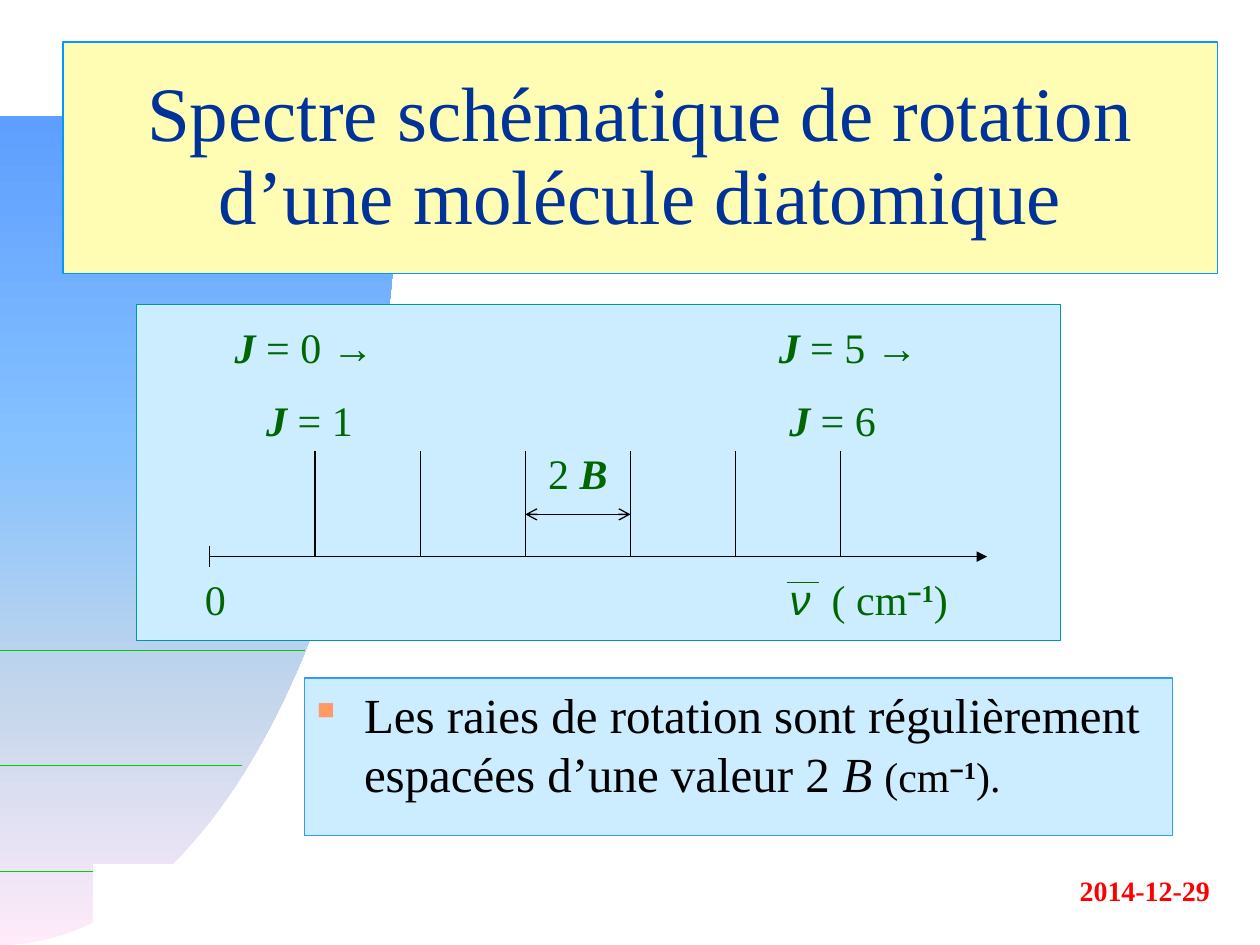
from lxml.etree import SubElement
from pptx import Presentation
from pptx.dml.color import RGBColor
from pptx.enum.shapes import MSO_CONNECTOR, MSO_SHAPE
from pptx.enum.text import MSO_ANCHOR, PP_ALIGN
from pptx.oxml.ns import qn
from pptx.util import Cm, Pt

BLACK, GREEN, LIME = "010000", "006600", "00CC00"
SERIF, SANS = "Times New Roman", "Arial"
LEFT, MID, RIGHT = PP_ALIGN.LEFT, PP_ALIGN.CENTER, PP_ALIGN.RIGHT
SLANT = {"italic": True}
HEAVY = {"bold": True, "italic": True}
UNIT = [("−", {"bold": True, "name": SANS}, {"baseline": "30000"}),
        ("1", {"bold": True}, {"baseline": "30000"})]

TITLE = [[("Spectre schématique de rotation d’une molécule diatomique",)]]
BODY = [[("Les raies de rotation sont régulièrement espacées d’une valeur 2 ",),
         ("B ", SLANT), ("(cm", {"size": Pt(24)}),
         *[(t, {**f, "size": Pt(24)}, x) for t, f, x in UNIT],
         (").", {"size": Pt(24)})]]
DATE = [[("2014-12-29", {"bold": True})]]
GAP = [[("2 ",), ("B", HEAVY)]]
ZERO = [[("0",)]]
WAVE = [[("ν", {"italic": True, "name": SANS}, {"spc": "600"}),
         (" ( cm",), *UNIT, (")",)]]
JUMPS = [((4.23, 6.35, 3.81, 2.79), 0, MID), ((15.45, 6.35, 3.39, 2.79), 5, LEFT)]

SKY = [(0, "FFEBFA"), (30, "C4D6EB"), (60, "85C2FF"), (100, "5E9EFF")]
CURVE = [(0, 19.05), (4.44, 19.05), (8.06, 11.59), (8.06, 2.34)]
RULES = [(4.87, 15.43), (6.14, 13.12), (3.39, 17.57)]
ZERO_X, STEP, TOP, AXIS = 4.23, 2.12, 9.1, 11.22


def rgb(code):
    """Turn a hex string into a colour."""
    return RGBColor.from_string(code)


def write(shape, paras, size, color, align=LEFT, after=13, **layout):
    """Fill a shape with paragraphs of formatted runs."""
    frame = shape.text_frame
    frame.word_wrap = True
    frame.vertical_anchor = MSO_ANCHOR.TOP
    for i, runs in enumerate(paras):
        para = frame.add_paragraph() if i else frame.paragraphs[0]
        para.alignment = align
        if i:
            para.space_before = Pt(after)
        for key, val in layout.items():
            setattr(para, key, val)
        for text, *more in runs:
            form = more[0] if more else {}
            run = para.add_run()
            run.text = text
            run.font.color.rgb = rgb(color)
            for key, val in {"size": Pt(size), "name": SERIF, **form}.items():
                setattr(run.font, key, val)
            for key, val in (more[1] if len(more) > 1 else {}).items():
                run.font._element.set(key, val)
    return frame


def box(shapes, place, fill, edge=None):
    """Draw a filled rectangle."""
    rect = shapes.add_shape(MSO_SHAPE.RECTANGLE, *map(Cm, place))
    rect.shadow.inherit = False
    rect.fill.solid()
    rect.fill.fore_color.rgb = rgb(fill)
    if edge:
        rect.line.color.rgb = rgb(edge)
        rect.line.width = Pt(0.75)
    else:
        rect.line.fill.background()
    return rect


def label(shapes, place, *args, **form):
    """Place a text box."""
    write(shapes.add_textbox(*map(Cm, place)), *args, **form)


def line(shapes, ends, color=BLACK, **tips):
    """Draw a thin line with optional arrowheads."""
    link = shapes.add_connector(MSO_CONNECTOR.STRAIGHT, *map(Cm, ends))
    link.line.color.rgb = rgb(color)
    link.line.width = Pt(0.75)
    SubElement(link._element.spPr, qn("a:effectLst"))
    for end, kind in tips.items():
        SubElement(link.line._get_or_add_ln(), qn(f"a:{end}"), type=kind)


def bow(t):
    """Give the point of the curve at t."""
    parts = ((1 - t) ** 3, 3 * t * (1 - t) ** 2, 3 * t * t * (1 - t), t ** 3)
    return tuple(Cm(sum(w * p[k] for w, p in zip(parts, CURVE))) for k in (0, 1))


def back(shapes):
    """Draw the backdrop and the date."""
    pen = shapes.build_freeform(*bow(0))
    pen.add_line_segments([bow(i / 60) for i in range(1, 61)] + [(0, Cm(2.34))])
    fan = pen.convert_to_shape()
    fan.shadow.inherit = False
    fan.line.fill.background()
    fan.fill.gradient()
    fan.fill.gradient_angle = 90
    stops = fan._element.spPr.find(".//" + qn("a:gsLst"))
    for old in list(stops):
        stops.remove(old)
    for pos, code in SKY:
        stop = SubElement(stops, qn("a:gs"), pos=str(pos * 1000))
        SubElement(stop, qn("a:srgbClr"), val=code)
    for end, y in RULES:
        line(shapes, (0, y, end, y), LIME)
    label(shapes, (20.83, 17.48, 3.81, 0.94), DATE, 16, "FF0000", RIGHT)
    box(shapes, (1.88, 17.42, 4.14, 1.19), "FFFFFF")


def words(shapes):
    """Draw the title and the bulleted text."""
    head = box(shapes, (1.27, 0.85, 23.28, 4.66), "FFFDB3", "0099FF")
    frame = write(head, TITLE, 44, "003399", MID, line_spacing=0.9)
    frame.vertical_anchor = MSO_ANCHOR.MIDDLE
    body = box(shapes, (6.14, 13.67, 17.5, 3.18), "CCECFF", "3399FF")
    props = body.text_frame.paragraphs[0]._p.get_or_add_pPr()
    props.set("marL", str(Cm(0.95)))
    props.set("indent", str(Cm(-0.95)))
    SubElement(SubElement(props, qn("a:buClr")), qn("a:srgbClr"), val="FF9966")
    SubElement(props, qn("a:buSzPct"), val="50000")
    SubElement(props, qn("a:buChar"), char="■")
    write(body, BODY, 28, BLACK)


def graph(shapes):
    """Draw the spectrum."""
    box(shapes, (2.75, 6.14, 18.63, 6.77), "CCECFF", "009999")
    rays = [ZERO_X + STEP * k for k in range(1, 7)]
    for x in rays:
        line(shapes, (x, TOP, x, AXIS))
    line(shapes, (rays[2], 10.37, rays[3], 10.37), headEnd="arrow", tailEnd="arrow")
    label(shapes, (rays[2], 8.89, STEP, 1.27), GAP, 24, GREEN, MID)
    line(shapes, (ZERO_X, AXIS, 19.9, AXIS), tailEnd="triangle")
    line(shapes, (ZERO_X, AXIS - 0.21, ZERO_X, AXIS + 0.21))
    label(shapes, (3.6, 11.43, 1.48, 1.27), ZERO, 24, GREEN, MID)
    label(shapes, (15.67, 11.43, 3.81, 1.27), WAVE, 24, GREEN)
    line(shapes, (15.87, 11.74, 16.51, 11.74), GREEN)
    for place, low, align in JUMPS:
        pair = [[("J", HEAVY), (f" = {low} →",)],
                [(" ",), ("J", HEAVY), (f" = {low + 1}",)]]
        label(shapes, place, pair, 24, GREEN, align)


def main():
    """Build the slide."""
    deck = Presentation()
    deck.slide_width, deck.slide_height = Cm(25.4), Cm(19.05)
    shapes = deck.slides.add_slide(deck.slide_layouts[6]).shapes
    for part in (back, words, graph):
        part(shapes)
    deck.save("out.pptx")


if __name__ == "__main__":
    main()
